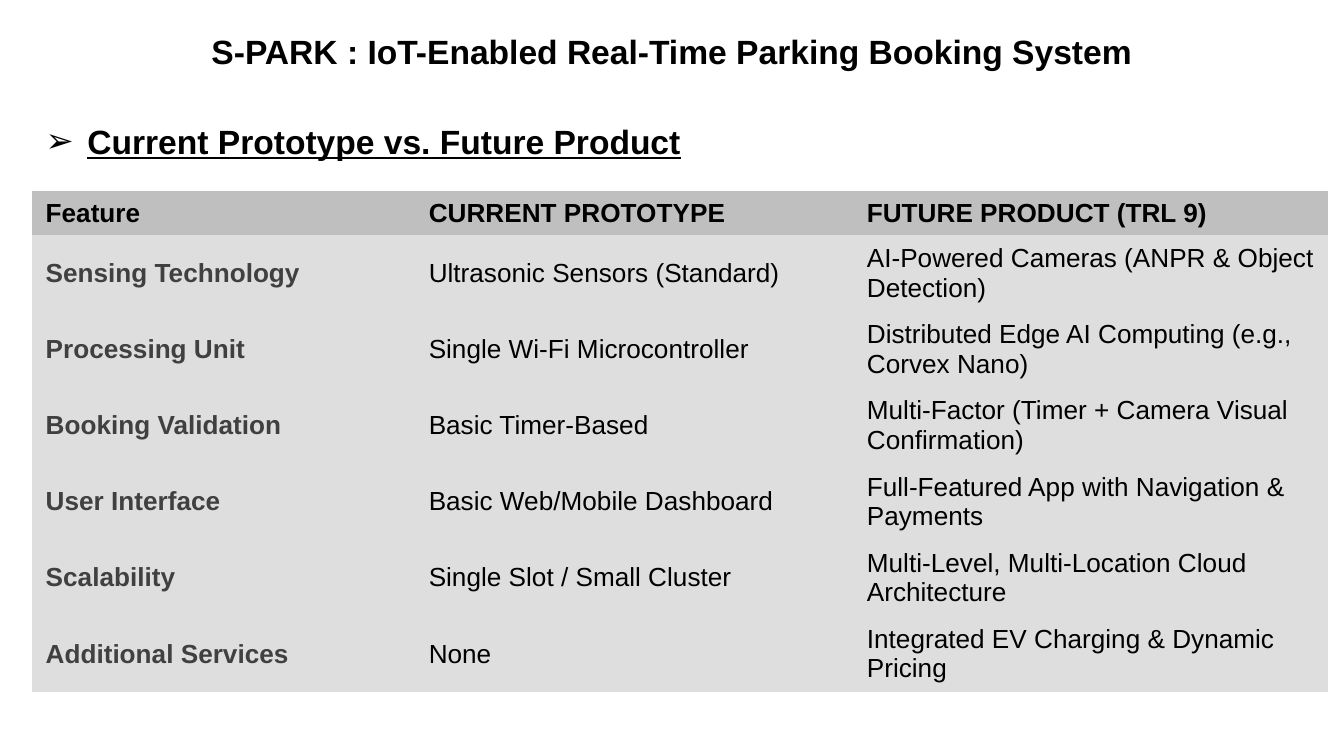
import pptx
import pptx.util
import pptx.dml.color
import pptx.enum.text
import pptx.oxml.ns
from lxml import etree

Inches = pptx.util.Inches
RGBColor = pptx.dml.color.RGBColor
Anchor = pptx.enum.text.MSO_ANCHOR

BLACK = RGBColor(0x00, 0x00, 0x00)
DARK_GRAY = RGBColor(0x40, 0x40, 0x40)
HEADER_GRAY = RGBColor(0xBF, 0xBF, 0xBF)
ROW_GRAY = RGBColor(0xDE, 0xDE, 0xDE)
NO_STYLE_ID = "{2D5ABB26-0587-4C30-8999-92F81FD0307C}"

ROWS = [
    ("Feature", "CURRENT PROTOTYPE", "FUTURE PRODUCT (TRL 9)"),
    ("Sensing Technology", "Ultrasonic Sensors (Standard)",
     "AI-Powered Cameras (ANPR & Object Detection)"),
    ("Processing Unit", "Single Wi-Fi Microcontroller",
     "Distributed Edge AI Computing (e.g., Corvex Nano)"),
    ("Booking Validation", "Basic Timer-Based",
     "Multi-Factor (Timer + Camera Visual Confirmation)"),
    ("User Interface", "Basic Web/Mobile Dashboard",
     "Full-Featured App with Navigation & Payments"),
    ("Scalability", "Single Slot / Small Cluster",
     "Multi-Level, Multi-Location Cloud Architecture"),
    ("Additional Services", "None",
     "Integrated EV Charging & Dynamic Pricing"),
]
COLUMN_WIDTHS = [2.85, 3.26, 3.53]
TABLE_HEIGHT = 3.73
HEADER_HEIGHT = 0.33
ROW_HEIGHT = (TABLE_HEIGHT - HEADER_HEIGHT) / (len(ROWS) - 1)


def format_run(run, size, color, bold):
    run.font.name = "Arial"
    run.font.size = pptx.util.Pt(size)
    run.font.color.rgb = color
    run.font.bold = bold


def place(shape, left, top, width, height):
    shape.left, shape.top = Inches(left), Inches(top)
    shape.width, shape.height = Inches(width), Inches(height)
    shape.text_frame.auto_size = pptx.enum.text.MSO_AUTO_SIZE.NONE
    shape.text_frame.vertical_anchor = Anchor.TOP
    shape.text_frame.word_wrap = True


# Widescreen 16:9 slide
presentation = pptx.Presentation()
presentation.slide_width = Inches(10)
presentation.slide_height = Inches(10) * 9 // 16
slide = presentation.slides.add_slide(presentation.slide_layouts[1])

# Title
title = slide.shapes.title
place(title, 0.34, 0.13, 9.32, 0.63)
title.text_frame.margin_top = title.text_frame.margin_bottom = Inches(0.1)
title.text_frame.text = "S-PARK : IoT-Enabled Real-Time Parking Booking System"
paragraph = title.text_frame.paragraphs[0]
paragraph.alignment = pptx.enum.text.PP_ALIGN.CENTER
format_run(paragraph.runs[0], 18, BLACK, True)

# Section heading with arrow bullet
heading = slide.placeholders[1]
place(heading, 0.24, 0.85, 9.42, 0.4)
heading.text_frame.text = "Current Prototype vs. Future Product"
paragraph = heading.text_frame.paragraphs[0]
paragraph.space_before = pptx.util.Pt(0)
properties = paragraph._p.get_or_add_pPr()
properties.set("marL", str(Inches(0.31)))
properties.set("indent", str(-Inches(0.31)))
bullet_color = etree.SubElement(properties, pptx.oxml.ns.qn("a:buClr"))
etree.SubElement(bullet_color, pptx.oxml.ns.qn("a:srgbClr"), val=str(BLACK))
etree.SubElement(properties, pptx.oxml.ns.qn("a:buFont"), typeface="Arial")
etree.SubElement(properties, pptx.oxml.ns.qn("a:buChar"), char="➢")
format_run(paragraph.runs[0], 18, BLACK, True)
paragraph.runs[0].font.underline = True

# Comparison table
heights = [HEADER_HEIGHT] + [ROW_HEIGHT] * (len(ROWS) - 1)
frame = slide.shapes.add_table(
    len(ROWS), len(COLUMN_WIDTHS), Inches(0.24), Inches(1.42),
    Inches(sum(COLUMN_WIDTHS)), Inches(TABLE_HEIGHT))
table = frame.table
table.horz_banding = False
table._tbl.tblPr.find(pptx.oxml.ns.qn("a:tableStyleId")).text = NO_STYLE_ID
for column, width in zip(table.columns, COLUMN_WIDTHS):
    column.width = Inches(width)
for row, height in zip(table.rows, heights):
    row.height = Inches(height)

for row_index, texts in enumerate(ROWS):
    is_header = row_index == 0
    for column_index, text in enumerate(texts):
        is_label = column_index == 0 and not is_header
        cell = table.cell(row_index, column_index)
        cell.fill.solid()
        cell.fill.fore_color.rgb = HEADER_GRAY if is_header else ROW_GRAY
        cell.vertical_anchor = Anchor.MIDDLE
        cell.text_frame.text = text
        format_run(cell.text_frame.paragraphs[0].runs[0], 14,
                   DARK_GRAY if is_label else BLACK, is_header or is_label)

presentation.save("out.pptx")
